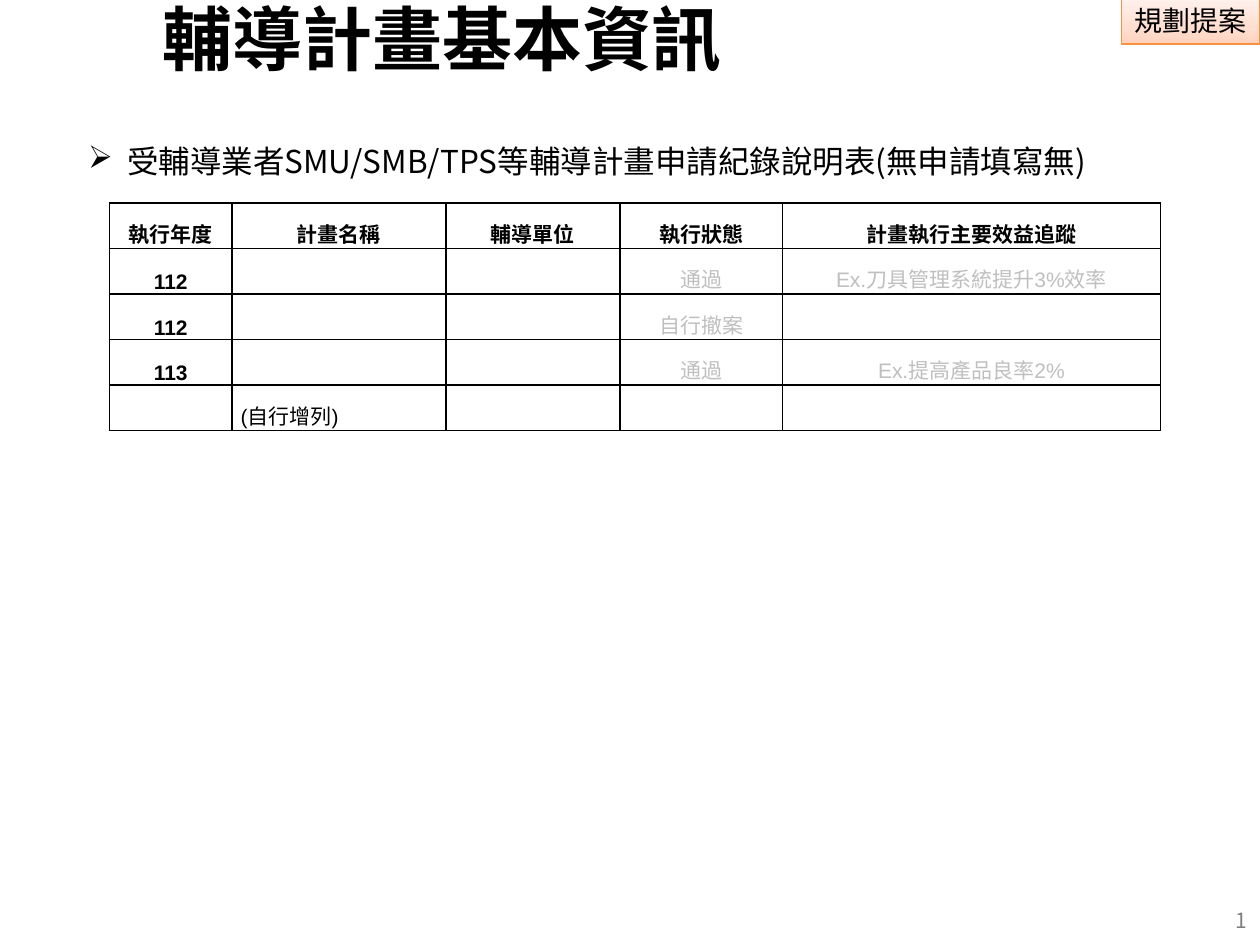
"""Build the slide with basic information on coaching projects."""
from copy import deepcopy
from dataclasses import dataclass

from lxml import etree
from pptx import Presentation
from pptx.dml.color import RGBColor
from pptx.enum.shapes import MSO_SHAPE
from pptx.enum.text import MSO_ANCHOR, PP_ALIGN
from pptx.oxml.ns import qn
from pptx.util import Inches, Pt

RECTANGLE = MSO_SHAPE.RECTANGLE
MIDDLE = MSO_ANCHOR.MIDDLE
LEFT, CENTER, RIGHT = PP_ALIGN.LEFT, PP_ALIGN.CENTER, PP_ALIGN.RIGHT


@dataclass(frozen=True)
class Theme:
    """Fonts, colours and type sizes of the slide."""
    font: str = "Noto Sans CJK SC"
    table_font: str = "Arial"
    black: str = "000000"
    example: str = "BFBFBF"
    number: str = "7F7F7F"
    tag_line: str = "F69240"
    tag_stops: tuple = ((0, "FFD2BD"), (0.35, "FFDED0"), (1, "FFF2ED"))
    title_size: int = 40
    body_size: int = 18
    tag_size: int = 16
    small_size: int = 12


THEME = Theme()


def write_text(frame, text, size, color=THEME.black, font=THEME.font, bold=False,
               align=LEFT, line_spacing=None, bullet=None, indent=0.31):
    """Write one formatted paragraph into a text frame."""
    paragraph = frame.paragraphs[0]
    paragraph.alignment = align
    if line_spacing:
        paragraph.line_spacing = Pt(line_spacing)
    if bullet:
        properties = paragraph._p.get_or_add_pPr()
        properties.set("marL", str(Inches(indent)))
        properties.set("indent", str(-Inches(indent)))
        etree.SubElement(properties, qn("a:buChar"), char=bullet)
    paragraph.font.size = Pt(size)
    if text:
        run = paragraph.add_run()
        run.text = text
        run.font.size = Pt(size)
        run.font.bold = bold
        run.font.name = font
        run.font.color.rgb = RGBColor.from_string(color)
        etree.SubElement(run._r.get_or_add_rPr(), qn("a:ea"), typeface=THEME.font)


class SlideBuilder:
    """Hold the theme and the current slide."""

    def __init__(self, slide, theme):
        """Keep the slide and its theme."""
        self.slide = slide
        self.theme = theme

    def text(self, text, left, top, width, height, **text_format):
        """Add a wrapping text box, centred vertically."""
        shape = self.slide.shapes.add_textbox(*map(Inches, (left, top, width, height)))
        shape.text_frame.word_wrap = True
        shape.text_frame.vertical_anchor = MIDDLE
        write_text(shape.text_frame, text, **text_format)

    def tag(self, text, left, top, width, height):
        """Add a label with a gradient fill."""
        shape = self.slide.shapes.add_shape(
            RECTANGLE, *map(Inches, (left, top, width, height)))
        shape.shadow.inherit = False
        shape.fill.gradient()
        shape.fill.gradient_angle = 90
        stop_list = next(shape._element.iter(qn("a:gsLst")))
        stop_list.insert(1, deepcopy(stop_list[0]))
        for stop, (position, color) in zip(shape.fill.gradient_stops, self.theme.tag_stops):
            stop.position = position
            stop.color.rgb = RGBColor.from_string(color)
        shape.line.color.rgb = RGBColor.from_string(self.theme.tag_line)
        shape.line.width = Pt(0.75)
        shape.text_frame.word_wrap = False
        shape.text_frame.vertical_anchor = MIDDLE
        write_text(shape.text_frame, text, size=self.theme.tag_size, align=CENTER)

    def border(self, cell):
        """Draw a thin line on every side of a cell."""
        properties = cell._tc.get_or_add_tcPr()
        for index, side in enumerate(("lnL", "lnR", "lnT", "lnB")):
            line = etree.Element(qn(f"a:{side}"), w=str(Pt(1)))
            fill = etree.SubElement(line, qn("a:solidFill"))
            etree.SubElement(fill, qn("a:srgbClr"), val=self.theme.black)
            properties.insert(index, line)

    def table(self, rows, left, top, column_widths, row_height):
        """Add a bordered table with a bold header and first column."""
        shape = self.slide.shapes.add_table(
            len(rows), len(column_widths), Inches(left), Inches(top),
            Inches(sum(column_widths)), Inches(row_height * len(rows)))
        table = shape.table
        for column, width in zip(table.columns, column_widths):
            column.width = Inches(width)
        for row_index, row in enumerate(rows):
            table.rows[row_index].height = Inches(row_height)
            for column_index, text in enumerate(row):
                cell = table.cell(row_index, column_index)
                cell.margin_left = cell.margin_right = Inches(0.07)
                cell.margin_top = cell.margin_bottom = 0
                cell.vertical_anchor = MIDDLE
                cell.fill.background()
                self.border(cell)
                is_heading = row_index == 0 or column_index == 0
                is_example = not is_heading and column_index >= 3
                write_text(
                    cell.text_frame, text, size=self.theme.small_size,
                    font=self.theme.table_font, bold=is_heading, line_spacing=26,
                    color=self.theme.example if is_example else self.theme.black,
                    align=CENTER if is_heading or is_example else LEFT)


def main():
    """Create the presentation and save it."""
    presentation = Presentation()
    presentation.slide_width, presentation.slide_height = Inches(10), Inches(7.5)
    slide = presentation.slides.add_slide(presentation.slide_layouts[6])
    builder = SlideBuilder(slide, THEME)

    builder.tag("規劃提案", 8.9, -0.02, 1.1, 0.37)
    builder.text("1", 9.25, 7.16, 0.75, 0.32, size=THEME.small_size,
                 color=THEME.number, align=RIGHT, line_spacing=12)
    builder.text("輔導計畫基本資訊", 0.98, -0.03, 5.06, 0.65,
                 size=THEME.title_size, bold=True, align=CENTER)
    rows = [
        ("執行年度", "計畫名稱", "輔導單位", "執行狀態", "計畫執行主要效益追蹤"),
        ("112", "", "", "通過", "Ex.刀具管理系統提升3%效率"),
        ("112", "", "", "自行撤案", ""),
        ("113", "", "", "通過", "Ex.提高產品良率2%"),
        ("", "(自行增列)", "", "", ""),
    ]
    builder.table(rows, 0.87, 1.61, (0.97, 1.7, 1.38, 1.29, 3), 0.36)
    builder.text("受輔導業者SMU/SMB/TPS等輔導計畫申請紀錄說明表(無申請填寫無)",
                 0.6, 1.08, 8.25, 0.4, size=THEME.body_size, bullet="➢")

    presentation.save("out.pptx")


if __name__ == "__main__":
    main()
